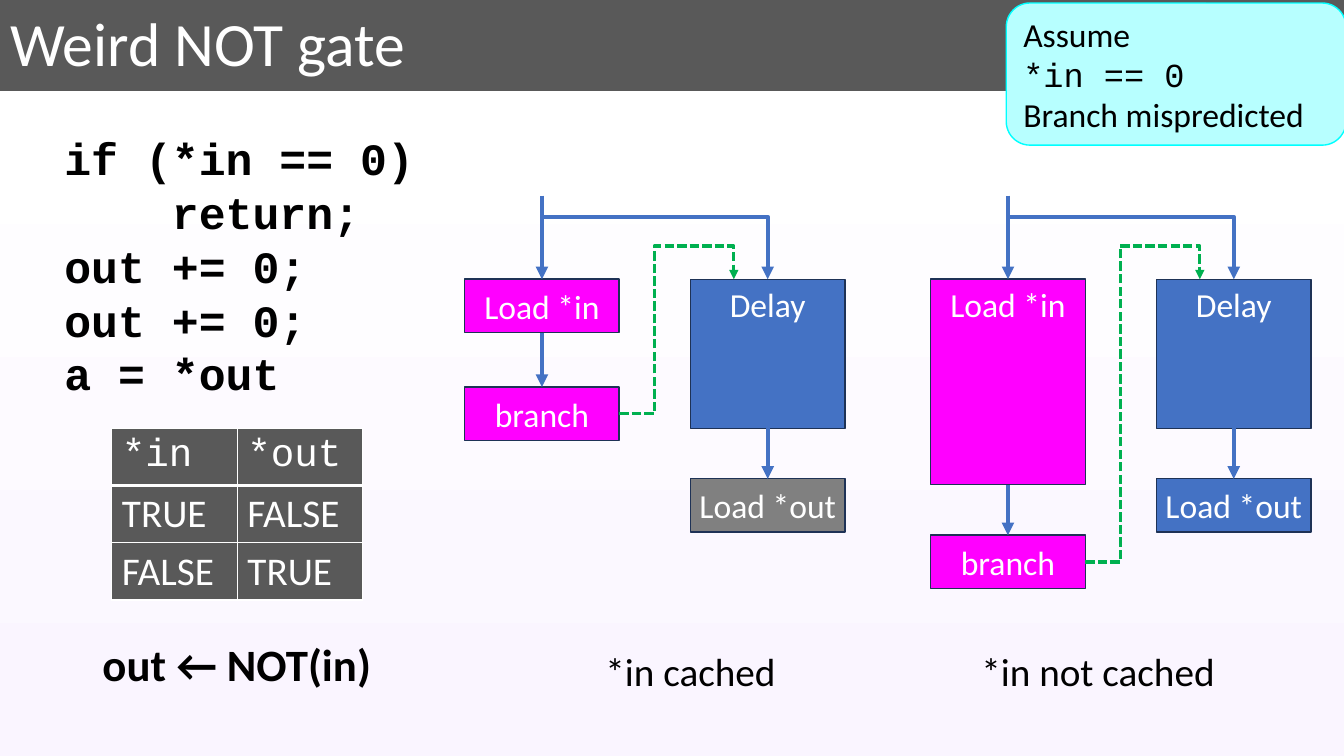
import pptx
import pptx.util
import pptx.dml.color
import pptx.enum.dml
import pptx.enum.shapes
import pptx.enum.text
import pptx.oxml
import pptx.oxml.ns

THEME = {
    "sans": "Calibri", "mono": "Courier New",
    "dark": "595959", "white": "FFFFFF", "black": "000000", "tint": "FAF5FF",
    "cyan": "B7FFFF", "cyan_edge": "00FFFF", "magenta": "FF00FF",
    "blue": "4472C4", "navy": "1E3256", "grey": "808080", "green": "00B050",
    "title": 44, "heading": 32, "caption": 28, "label": 24,
}
sans, mono = THEME["sans"], THEME["mono"]
RGB = pptx.dml.color.RGBColor.from_string
Pt = pptx.util.Pt
ALIGN = pptx.enum.text.PP_ALIGN
ANCHOR = pptx.enum.text.MSO_ANCHOR
SHAPE = pptx.enum.shapes.MSO_SHAPE
NS = pptx.oxml.ns.nsdecls("a")
qn = pptx.oxml.ns.qn

prs = pptx.Presentation()
prs.slide_width = pptx.util.Inches(13.33)
prs.slide_height = pptx.util.Inches(7.5)
COL, ROW = prs.slide_width / 40, prs.slide_height / 30
s = prs.slides.add_slide(prs.slide_layouts[5])


def write(tf, lines, size, color, align=ALIGN.LEFT, bold=False):
    tf.word_wrap = True
    for i, (text, font) in enumerate(lines):
        p = tf.paragraphs[0] if i == 0 else tf.add_paragraph()
        p.alignment = align
        r = p.add_run()
        r.text = text
        r.font.name = font
        r.font.size = Pt(THEME[size])
        r.font.bold = bold
        r.font.color.rgb = RGB(THEME[color])


def route(points, color, width, dash=None):
    pts = [(int(x * COL), int(y * ROW)) for x, y in points]
    if len(pts) == 2:
        sp = s.shapes.add_connector(
            pptx.enum.shapes.MSO_CONNECTOR.STRAIGHT, *pts[0], *pts[1])
        sp._element.spPr.append(pptx.oxml.parse_xml(f"<a:effectLst {NS}/>"))
    else:
        builder = s.shapes.build_freeform(*pts[0])
        builder.add_line_segments(pts[1:], close=False)
        sp = builder.convert_to_shape()
        sp.fill.background()
        sp.shadow.inherit = False
    sp.line.color.rgb = RGB(THEME[color])
    sp.line.width = Pt(width)
    if dash:
        sp.line.dash_style = dash
    ln = sp._element.spPr.find(qn("a:ln"))
    ln.append(pptx.oxml.parse_xml(f'<a:tailEnd {NS} type="triangle"/>'))


fill = s.background.fill
fill.gradient()
fill.gradient_angle = 270
stops = s.background._cSld.find(".//" + qn("a:gsLst"))
stops.clear()
for share, color in [(0, "dark"), (12, "dark"), (12, "white"), (100, "tint")]:
    stops.append(pptx.oxml.parse_xml(
        f'<a:gs {NS} pos="{share * 1000}"><a:srgbClr val="{THEME[color]}"/></a:gs>'))

title = s.shapes.title
title.left, title.top = 0, 0
title.width, title.height = int(39.7 * COL), int(3.68 * ROW)
tf = title.text_frame
tf.vertical_anchor = ANCHOR.MIDDLE
tf.auto_size = pptx.enum.text.MSO_AUTO_SIZE.NONE
write(tf, [("Weird NOT gate", sans)], "title", "white")
tf.paragraphs[0].line_spacing = 0.9

BOX_W, BOX_H, TOP = 4.6, 2.12, 11.08
DELAY_X, DELAY_H, OUT_Y = 6.72, 5.92, 19
MID = BOX_W / 2
panels = [
    (13.83, BOX_H, 15.36, "grey", ANCHOR.MIDDLE),
    (27.7, 8.16, 21.24, "blue", ANCHOR.TOP),
]

boxes = [(SHAPE.ROUNDED_RECTANGLE, 29.95, 0.12, 10.11, 5.64, "cyan", "cyan_edge",
          "black", ALIGN.LEFT, ANCHOR.MIDDLE, 0.3,
          [("Assume", sans), ("*in == 0", mono), ("Branch mispredicted", sans)])]
for x, load_h, branch_y, out_color, load_anchor in panels:
    for dx, y, h, color, anchor, label in [
        (0, TOP, load_h, "magenta", load_anchor, "Load *in"),
        (DELAY_X, TOP, DELAY_H, "blue", ANCHOR.TOP, "Delay"),
        (DELAY_X, OUT_Y, BOX_H, out_color, ANCHOR.MIDDLE, "Load *out"),
        (0, branch_y, BOX_H, "magenta", ANCHOR.MIDDLE, "branch"),
    ]:
        boxes.append((SHAPE.RECTANGLE, x + dx, y, BOX_W, h, color, "navy",
                      "white", ALIGN.CENTER, anchor, 0.12, [(label, sans)]))

for kind, x, y, w, h, color, edge, ink, align, anchor, inset, lines in boxes:
    sp = s.shapes.add_shape(kind, int(x * COL), int(y * ROW), int(w * COL), int(h * ROW))
    sp.shadow.inherit = False
    sp.fill.solid()
    sp.fill.fore_color.rgb = RGB(THEME[color])
    sp.line.color.rgb = RGB(THEME[edge])
    sp.line.width = Pt(1)
    tf = sp.text_frame
    tf.vertical_anchor = anchor
    tf.margin_left = tf.margin_right = int(inset * COL)
    write(tf, lines, "label", ink, align)

for x, load_h, branch_y, out_color, load_anchor in panels:
    load_x, delay_x = x + MID, x + DELAY_X + MID
    route([(load_x, 7.76), (load_x, TOP)], "blue", 3)
    route([(load_x, TOP + load_h), (load_x, branch_y)], "blue", 3)
    route([(delay_x, TOP + DELAY_H), (delay_x, OUT_Y)], "blue", 3)
    route([(load_x, 8.6), (delay_x, 8.6), (delay_x, TOP)], "blue", 3)
    exit_y, riser_x, entry_x = branch_y + BOX_H / 2, x + 5.64, x + 8.01
    route([(x + BOX_W, exit_y), (riser_x, exit_y), (riser_x, 9.76),
           (entry_x, 9.76), (entry_x, TOP)],
          "green", 2.25, pptx.enum.dml.MSO_LINE.SQUARE_DOT)

code = ["if (*in == 0)", "return;", "out += 0;", "out += 0;", "a = *out"]
for x, y, w, h, lines, size, align, bold in [
    (1.62, 5, 14.67, 11.16, [(c, mono) for c in code], "heading", ALIGN.LEFT, True),
    (16.5, 25.48, 8.1, 2.28, [("*in cached", sans)], "caption", ALIGN.CENTER, False),
    (28.63, 25.48, 8.1, 2.28, [("*in not cached", sans)], "caption", ALIGN.CENTER, False),
    (1.74, 25.08, 10.62, 2.56, [("out ← NOT(in)", sans)], "heading", ALIGN.CENTER, True),
]:
    sp = s.shapes.add_textbox(int(x * COL), int(y * ROW), int(w * COL), int(h * ROW))
    tf = sp.text_frame
    tf.auto_size = pptx.enum.text.MSO_AUTO_SIZE.SHAPE_TO_FIT_TEXT
    write(tf, lines, size, "black", align, bold)
    for p in tf.paragraphs:
        if p.text == "return;":
            indent = Pt(4 * 0.6 * THEME["heading"])
            p._p.get_or_add_pPr().set("marL", str(indent))

truth = [("*in", "*out"), ("TRUE", "FALSE"), ("FALSE", "TRUE")]
table = s.shapes.add_table(3, 2, int(3.33 * COL), int(17 * ROW),
                           int(7.47 * COL), int(6.8 * ROW)).table
table.first_row = table.horz_banding = False
for i, values in enumerate(truth):
    for j, value in enumerate(values):
        cell = table.cell(i, j)
        cell.fill.solid()
        cell.fill.fore_color.rgb = RGB(THEME["dark"])
        write(cell.text_frame, [(value, mono if i == 0 else sans)], "caption", "white")
        for k, side in enumerate("LRTB"):
            width = Pt(3 if i == 0 and side == "B" else 1)
            cell._tc.get_or_add_tcPr().insert(k, pptx.oxml.parse_xml(
                f'<a:ln{side} {NS} w="{width}"><a:solidFill>'
                f'<a:srgbClr val="{THEME["white"]}"/></a:solidFill></a:ln{side}>'))

prs.save("out.pptx")
